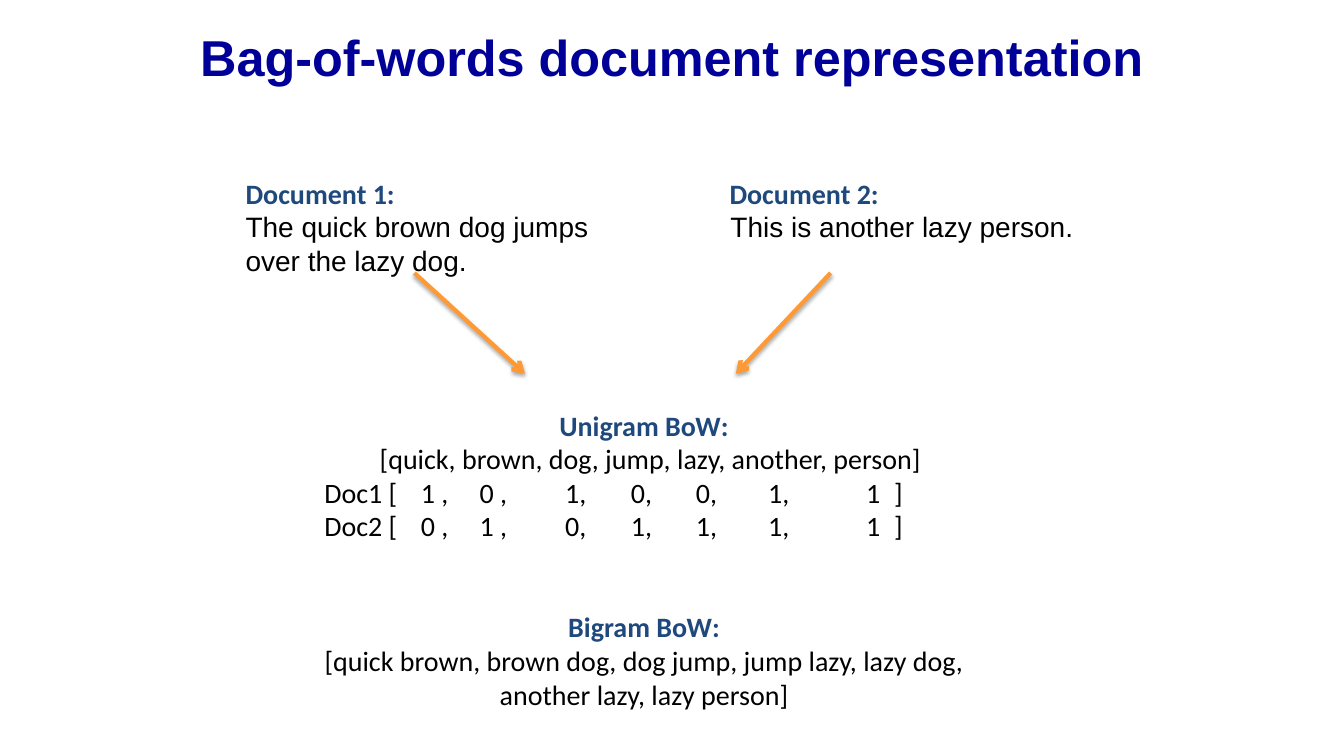
from dataclasses import dataclass

from lxml import etree
from pptx import Presentation
from pptx.dml.color import RGBColor
from pptx.enum.shapes import MSO_CONNECTOR as Connector
from pptx.enum.text import MSO_ANCHOR as Anchor, PP_ALIGN as Align
from pptx.oxml import parse_xml
from pptx.oxml.ns import qn
from pptx.slide import Slide
from pptx.util import Pt

NAVY, BLUE, BLACK, ORANGE = "000099", "1F497D", "000000", "FF9933"
DRAWING_NS = "http://schemas.openxmlformats.org/drawingml/2006/main"
COUNT_TABS = (69, 111, 172, 219, 265.5, 317, 387, 407)


@dataclass(frozen=True)
class Line:
    text: str
    color: str = BLACK
    font: str = "Calibri"
    size: float = 20
    bold: bool = False
    align: Align = Align.LEFT
    space_before: float = 0
    indent: float = 0
    tabs: tuple[float, ...] = ()


@dataclass(frozen=True)
class Block:
    left: float
    top: float
    width: float
    height: float
    lines: tuple[Line, ...]
    anchor: Anchor = Anchor.TOP


@dataclass(frozen=True)
class Arrow:
    start: tuple[float, float]
    end: tuple[float, float]


def heading(text: str, align: Align = Align.LEFT, space_before: float = 0) -> Line:
    return Line(text, BLUE, bold=True, align=align, space_before=space_before)


def count_row(name: str, counts: tuple[int, ...]) -> Line:
    """Term counts of one document, each under its vocabulary word."""
    cells = [f"{n} ," if i < 2 else f"{n}," for i, n in enumerate(counts[:-1])]
    return Line("\t".join([f"{name} [", *cells, str(counts[-1]), "]"]), tabs=COUNT_TABS)


BLOCKS = (
    Block(120, 9.4, 720, 62, (
        Line("Bag-of-words document representation", NAVY, "Arial", 36, True, Align.CENTER),
    ), Anchor.MIDDLE),
    Block(168.3, 122.4, 300, 101.5, (
        heading("Document 1:"),
        Line("The quick brown dog jumps over the lazy dog.", font="Arial"),
    )),
    Block(514, 122.4, 260.6, 55.5, (
        heading("Document 2:"),
        Line("This is another lazy person.", font="Arial", align=Align.CENTER),
    )),
    Block(224.6, 288, 471, 247, (
        heading("Unigram BoW:", Align.CENTER),
        Line("[quick, brown, dog, jump, lazy, another, person]", align=Align.CENTER, indent=9),
        count_row("Doc1", (1, 0, 1, 0, 0, 1, 1)),
        count_row("Doc2", (0, 1, 0, 1, 1, 1, 1)),
        heading("Bigram BoW:", Align.CENTER, space_before=48),
        Line("[quick brown, brown dog, dog jump, jump lazy, lazy dog, another lazy, lazy person]",
             align=Align.CENTER),
    )),
)
ARROWS = (
    Arrow((593.3, 195), (525.6, 267)),
    Arrow((296, 195), (375, 267)),
)


def rgb(color: str) -> RGBColor:
    return RGBColor.from_string(color)


def draw_block(slide: Slide, block: Block) -> None:
    box = slide.shapes.add_textbox(
        Pt(block.left), Pt(block.top), Pt(block.width), Pt(block.height))
    frame = box.text_frame
    frame.word_wrap = True
    frame.vertical_anchor = block.anchor
    frame.text = "\n".join(line.text for line in block.lines)
    for paragraph, line in zip(frame.paragraphs, block.lines):
        paragraph.alignment = line.align
        if line.space_before:
            paragraph.space_before = Pt(line.space_before)
        properties = paragraph._p.get_or_add_pPr()
        if line.indent:
            properties.set("marL", str(Pt(line.indent)))
        if line.tabs:
            stops = etree.SubElement(properties, qn("a:tabLst"))
            for position in line.tabs:
                etree.SubElement(stops, qn("a:tab"), pos=str(Pt(position)), algn="l")
        for run in paragraph.runs:
            run.font.name = line.font
            run.font.size = Pt(line.size)
            run.font.bold = line.bold
            run.font.color.rgb = rgb(line.color)


def draw_arrow(slide: Slide, arrow: Arrow) -> None:
    connector = slide.shapes.add_connector(
        Connector.STRAIGHT, *map(Pt, arrow.start + arrow.end))
    connector.line.color.rgb = rgb(ORANGE)
    connector.line.width = Pt(3)
    etree.SubElement(connector.line._get_or_add_ln(), qn("a:tailEnd"), type="arrow")
    connector._element.spPr.append(parse_xml(
        f'<a:effectLst xmlns:a="{DRAWING_NS}">'
        f'<a:outerShdw blurRad="{Pt(3.1)}" dist="{Pt(1.8)}" dir="5400000" rotWithShape="0">'
        f'<a:srgbClr val="{BLACK}"><a:alpha val="35000"/></a:srgbClr>'
        '</a:outerShdw></a:effectLst>'))


def main() -> None:
    deck = Presentation()
    deck.slide_width, deck.slide_height = Pt(960), Pt(540)
    slide = deck.slides.add_slide(deck.slide_layouts[6])
    for block in BLOCKS:
        draw_block(slide, block)
    for arrow in ARROWS:
        draw_arrow(slide, arrow)
    deck.save("out.pptx")


if __name__ == "__main__":
    main()
